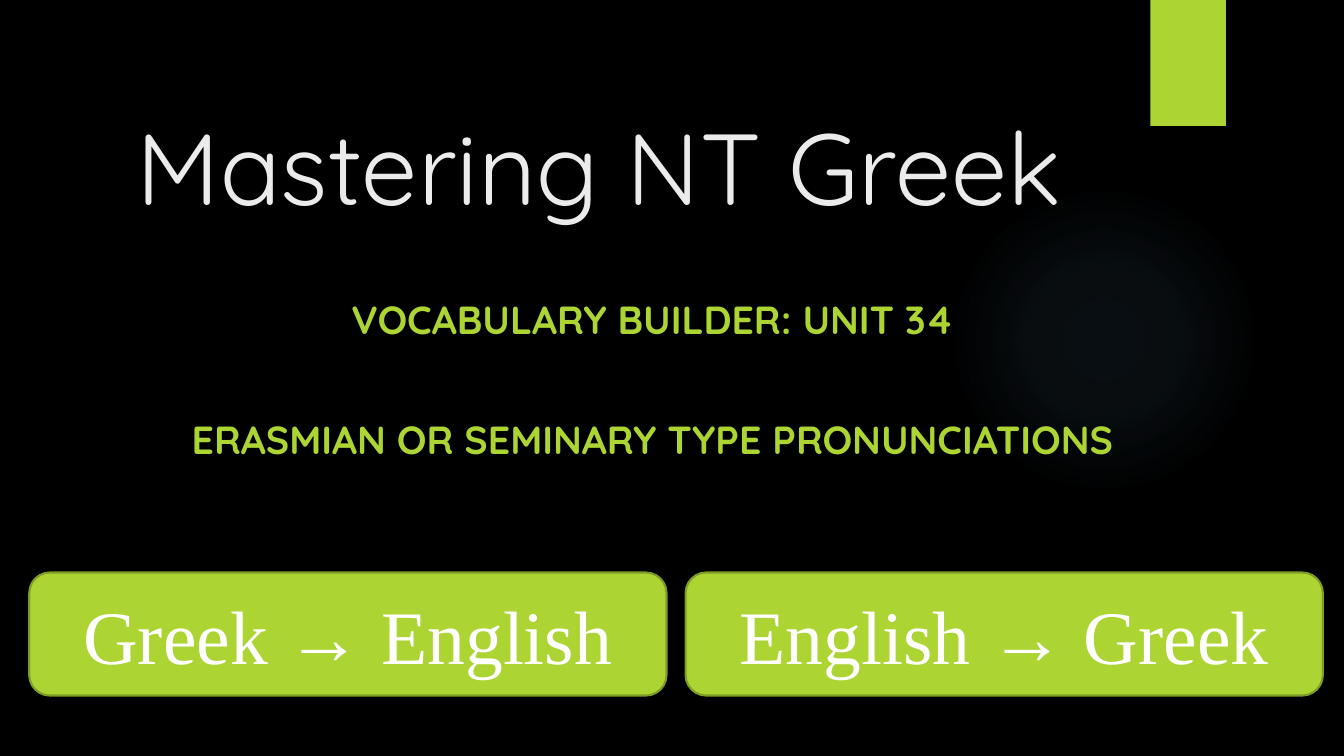
"""Build the title slide of a New Testament Greek vocabulary unit."""
from dataclasses import dataclass

from lxml import etree
from pptx import Presentation
from pptx.dml.color import RGBColor
from pptx.enum.shapes import MSO_SHAPE
from pptx.enum.text import MSO_ANCHOR, PP_ALIGN
from pptx.oxml import parse_xml
from pptx.oxml.ns import nsdecls, qn
from pptx.shapes.autoshape import Shape
from pptx.slide import Slide
from pptx.util import Inches, Pt

RECTANGLE = MSO_SHAPE.RECTANGLE
ROUNDED = MSO_SHAPE.ROUNDED_RECTANGLE
OVAL = MSO_SHAPE.OVAL
TOP, MIDDLE, BOTTOM = MSO_ANCHOR.TOP, MSO_ANCHOR.MIDDLE, MSO_ANCHOR.BOTTOM
LEFT, CENTER = PP_ALIGN.LEFT, PP_ALIGN.CENTER


@dataclass(frozen=True)
class Theme:
    """Colours, fonts and type sizes of the slide."""
    background: str = "000000"
    accent: str = "ACD433"
    outline: str = "7F9D26"
    glow: str = "7AC4F0"
    title: str = "EBEBEB"
    button_text: str = "FFFFFF"
    display_font: str = "Quicksand"
    button_font: str = "Times New Roman"
    title_size: int = 72
    subtitle_size: int = 28
    button_size: int = 54


@dataclass(frozen=True)
class Box:
    """Position and size in inches."""
    left: float
    top: float
    width: float
    height: float


@dataclass(frozen=True)
class TextStyle:
    """Look and placement of a block of text."""
    font: str
    size: int
    color: str
    align: PP_ALIGN
    anchor: MSO_ANCHOR
    bold: bool = False
    gap: int = 0


@dataclass(frozen=True)
class TextBlock:
    """A free text box with its lines."""
    box: Box
    lines: tuple[str, ...]
    style: TextStyle


THEME = Theme()
BUTTON_STYLE = TextStyle(THEME.button_font, THEME.button_size, THEME.button_text, CENTER, MIDDLE)
TEXT_BLOCKS = (
    TextBlock(
        Box(1.26, 0.7, 10.04, 1.59),
        ("Mastering NT Greek",),
        TextStyle(THEME.display_font, THEME.title_size, THEME.title, LEFT, BOTTOM),
    ),
    TextBlock(
        Box(0.78, 2.88, 11.38, 2.69),
        ("VOCABULARY BUILDER: UNIT 34", "ERASMIAN OR SEMINARY TYPE PRONUNCIATIONS"),
        TextStyle(THEME.display_font, THEME.subtitle_size, THEME.accent, CENTER, TOP, True, 52),
    ),
)
BUTTON_LABELS = ("Greek → English", "English → Greek")
FIRST_BUTTON = Box(0.29, 5.68, 6.32, 1.22)
BUTTON_PITCH = 6.51
GLOW_BOX = Box(9.41, 1.83, 3.08, 3.08)
GLOW_STOPS = ((0, 7), (36, 6), (69, 0))
TAB_BOX = Box(11.41, 0, 0.75, 1.25)


def lengths(box: Box) -> tuple[Inches, Inches, Inches, Inches]:
    """Convert a box to slide lengths."""
    return Inches(box.left), Inches(box.top), Inches(box.width), Inches(box.height)


def add_filled_shape(slide: Slide, kind: MSO_SHAPE, box: Box, color: str) -> Shape:
    """Add a flat shape without outline or shadow."""
    shape = slide.shapes.add_shape(kind, *lengths(box))
    shape.shadow.inherit = False
    shape.fill.solid()
    shape.fill.fore_color.rgb = RGBColor.from_string(color)
    shape.line.fill.background()
    return shape


def write_lines(shape: Shape, lines: tuple[str, ...], style: TextStyle) -> None:
    """Write one paragraph per line into a shape."""
    frame = shape.text_frame
    frame.word_wrap = True
    frame.vertical_anchor = style.anchor
    for index, line in enumerate(lines):
        paragraph = frame.add_paragraph() if index else frame.paragraphs[0]
        paragraph.alignment = style.align
        if index:
            paragraph.space_before = Pt(style.gap)
        run = paragraph.add_run()
        run.text = line
        run.font.name = style.font
        run.font.size = Pt(style.size)
        run.font.bold = style.bold
        run.font.color.rgb = RGBColor.from_string(style.color)


def add_glow(slide: Slide) -> None:
    """Add the soft circle that fades towards its edge."""
    shape = add_filled_shape(slide, OVAL, GLOW_BOX, THEME.glow)
    stops = "".join(
        f'<a:gs pos="{position * 1000}"><a:srgbClr val="{THEME.glow}">'
        f'<a:alpha val="{opacity * 1000}"/></a:srgbClr></a:gs>'
        for position, opacity in GLOW_STOPS
    )
    gradient: etree.ElementBase = parse_xml(
        f'<a:gradFill {nsdecls("a")} rotWithShape="1"><a:gsLst>{stops}</a:gsLst>'
        '<a:path path="circle"><a:fillToRect l="50000" t="50000" r="50000" b="50000"/>'
        "</a:path></a:gradFill>"
    )
    properties = shape.element.spPr
    properties.replace(properties.find(qn("a:solidFill")), gradient)


def add_text_block(slide: Slide, block: TextBlock) -> None:
    """Add a text box with styled lines."""
    write_lines(slide.shapes.add_textbox(*lengths(block.box)), block.lines, block.style)


def add_button(slide: Slide, index: int, label: str) -> None:
    """Add one rounded button of the bottom row."""
    first = FIRST_BUTTON
    box = Box(first.left + index * BUTTON_PITCH, first.top, first.width, first.height)
    shape = add_filled_shape(slide, ROUNDED, box, THEME.accent)
    shape.line.color.rgb = RGBColor.from_string(THEME.outline)
    shape.line.width = Pt(1.5)
    write_lines(shape, (label,), BUTTON_STYLE)


def main() -> None:
    """Build and save the presentation."""
    presentation = Presentation()
    presentation.slide_width = Inches(13.33)
    presentation.slide_height = Inches(7.5)
    slide = presentation.slides.add_slide(presentation.slide_layouts[6])
    slide.background.fill.solid()
    slide.background.fill.fore_color.rgb = RGBColor.from_string(THEME.background)
    add_glow(slide)
    add_filled_shape(slide, RECTANGLE, TAB_BOX, THEME.accent)
    for block in TEXT_BLOCKS:
        add_text_block(slide, block)
    for index, label in enumerate(BUTTON_LABELS):
        add_button(slide, index, label)
    presentation.save("out.pptx")


if __name__ == "__main__":
    main()
